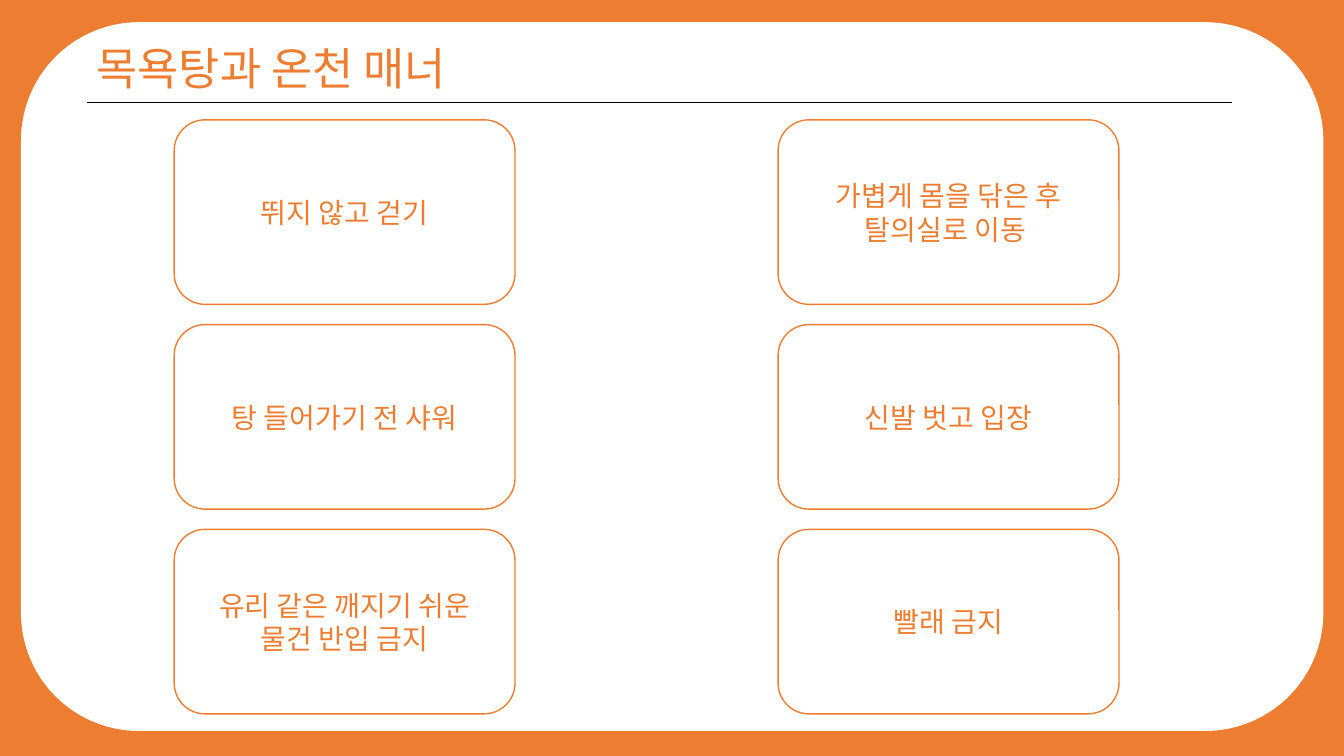
from dataclasses import dataclass

from lxml import etree
from pptx import Presentation
from pptx.dml.color import RGBColor
from pptx.enum.shapes import MSO_CONNECTOR, MSO_SHAPE
from pptx.enum.text import MSO_ANCHOR, MSO_AUTO_SIZE, PP_ALIGN
from pptx.oxml.ns import qn
from pptx.util import Cm, Pt

ROUND = MSO_SHAPE.ROUNDED_RECTANGLE
STRAIGHT = MSO_CONNECTOR.STRAIGHT
MIDDLE = MSO_ANCHOR.MIDDLE
CENTER, LEFT = PP_ALIGN.CENTER, PP_ALIGN.LEFT
GROW = MSO_AUTO_SIZE.SHAPE_TO_FIT_TEXT


@dataclass(frozen=True)
class Theme:
    font: str = "Noto Sans CJK KR"
    accent: RGBColor = RGBColor(0xED, 0x7D, 0x31)
    paper: RGBColor = RGBColor(0xFF, 0xFF, 0xFF)
    ink: RGBColor = RGBColor(0, 0, 0)
    title: int = 32
    body: int = 20
    rule: float = 0.5
    edge: float = 1


class Page:
    def __init__(self, slide, theme):
        self.slide, self.theme = slide, theme
        fill = slide.background.fill
        fill.solid()
        fill.fore_color.rgb = theme.accent

    def text(self, frame, lines, size, align):
        frame.word_wrap = True
        for i, line in enumerate(lines):
            para = frame.add_paragraph() if i else frame.paragraphs[0]
            para.alignment = align
            run = para.add_run()
            run.text = line
            font = run.font
            font.size = Pt(size)
            font.color.rgb = self.theme.accent
            font.name = self.theme.font
            # Korean glyphs take the East Asian typeface
            etree.SubElement(run._r.get_or_add_rPr(), qn("a:ea"),
                             typeface=self.theme.font)

    def panel(self, x, y, w, h):
        box = self.slide.shapes.add_shape(ROUND, Cm(x), Cm(y), Cm(w), Cm(h))
        box.shadow.inherit = False
        box.fill.solid()
        box.fill.fore_color.rgb = self.theme.paper
        box.line.fill.background()
        return box

    def card(self, x, y, w, h, lines):
        box = self.panel(x, y, w, h)
        box.line.color.rgb = self.theme.accent
        box.line.width = Pt(self.theme.edge)
        box.text_frame.vertical_anchor = MIDDLE
        self.text(box.text_frame, lines, self.theme.body, CENTER)

    def title(self, x, y, w, h, words):
        box = self.slide.shapes.add_textbox(Cm(x), Cm(y), Cm(w), Cm(h))
        self.text(box.text_frame, [words], self.theme.title, LEFT)
        box.text_frame.auto_size = GROW

    def rule(self, x, y, w):
        line = self.slide.shapes.add_connector(
            STRAIGHT, Cm(x), Cm(y), Cm(x + w), Cm(y))
        line.line.color.rgb = self.theme.ink
        line.line.width = Pt(self.theme.rule)
        etree.SubElement(line._element.spPr, qn("a:effectLst"))


# Manners by column, top to bottom
MANNERS = [
    [["뛰지 않고 걷기"],
     ["탕 들어가기 전 샤워"],
     ["유리 같은 깨지기 쉬운", "물건 반입 금지"]],
    [["가볍게 몸을 닦은 후", "탈의실로 이동 "],
     ["신발 벗고 입장"],
     ["빨래 금지"]],
]


def main():
    deck = Presentation()
    deck.slide_width, deck.slide_height = Cm(33.87), Cm(19.05)
    page = Page(deck.slides.add_slide(deck.slide_layouts[6]), Theme())

    # White panel and heading
    page.panel(0.53, 0.56, 32.82, 17.86)
    page.rule(2.18, 2.59, 28.88)
    page.title(2.18, 0.91, 14.94, 1.63, "목욕탕과 온천 매너")

    # Grid of cards
    for col, group in enumerate(MANNERS):
        for row, lines in enumerate(group):
            page.card(4.39 + 15.22 * col, 3.02 + 5.16 * row, 8.59, 4.65, lines)

    deck.save("out.pptx")


if __name__ == "__main__":
    main()
